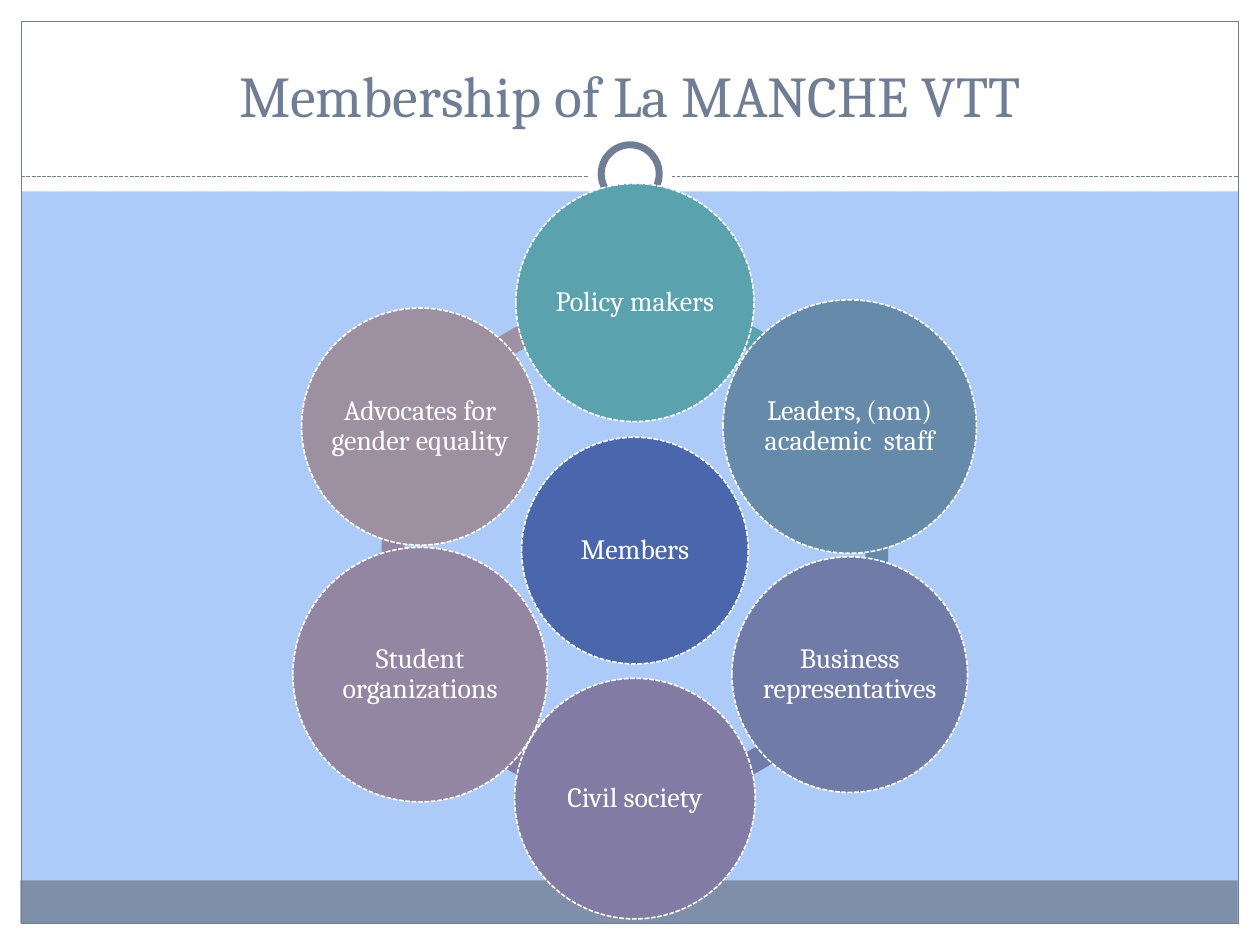
from math import cos, pi, sin

from lxml.etree import SubElement
from pptx import Presentation
from pptx.dml.color import RGBColor
from pptx.enum.dml import MSO_LINE
from pptx.enum.shapes import MSO_CONNECTOR, MSO_SHAPE
from pptx.enum.text import MSO_ANCHOR, PP_ALIGN
from pptx.oxml.ns import qn
from pptx.util import Cm, Pt

WHITE = RGBColor(0xFF, 0xFF, 0xFF)
SKY = RGBColor(0xAC, 0xCB, 0xF9)
SLATE = RGBColor(0x70, 0x7E, 0x95)
FOOTER = RGBColor(0x7F, 0x8F, 0xA9)
BLUE = RGBColor(0x4A, 0x66, 0xAC)
TEAL = RGBColor(0x5A, 0xA2, 0xAE)
STEEL = RGBColor(0x66, 0x8A, 0xAA)
INDIGO = RGBColor(0x71, 0x7B, 0xA7)
VIOLET = RGBColor(0x82, 0x7C, 0xA4)
MAUVE = RGBColor(0x93, 0x86, 0xA2)
ROSE = RGBColor(0x9D, 0x90, 0xA0)

deck = Presentation()
deck.slide_width, deck.slide_height = Cm(25.4), Cm(19.05)
page = deck.slides.add_slide(deck.slide_layouts[6])
page.background.fill.solid()
page.background.fill.fore_color.rgb = SKY


def add_shape(kind, left, top, width, height, fill=None, line=None, weight=0.75, dash=None):
    shape = page.shapes.add_shape(kind, Cm(left), Cm(top), Cm(width), Cm(height))
    shape.shadow.inherit = False
    if fill is None:
        shape.fill.background()
    else:
        shape.fill.solid()
        shape.fill.fore_color.rgb = fill
    if line is None:
        shape.line.fill.background()
    else:
        shape.line.color.rgb = line
        shape.line.width = Pt(weight)
        shape.line.dash_style = dash
    return shape


def add_text(text, left, top, width, height, size=16, color=WHITE,
             anchor=MSO_ANCHOR.MIDDLE, spacing=0.9, margin_x=0.3, margin_y=0.05):
    box = page.shapes.add_textbox(Cm(left), Cm(top), Cm(width), Cm(height))
    frame = box.text_frame
    frame.word_wrap = True
    frame.vertical_anchor = anchor
    frame.margin_left = frame.margin_right = Cm(margin_x)
    frame.margin_top = frame.margin_bottom = Cm(margin_y)
    para = frame.paragraphs[0]
    para.alignment = PP_ALIGN.CENTER
    para.line_spacing = spacing
    span = para.add_run()
    span.text = text
    span.font.name = "Cambria"
    span.font.size = Pt(size)
    span.font.color.rgb = color


# White header and margins, footer band, outline
for bounds, fill in [
    ((0, 18.62, 25.4, 0.43), WHITE),
    ((0, 0, 25.4, 3.86), WHITE),
    ((0, 0, 0.43, 19.05), WHITE),
    ((24.97, 0, 0.43, 19.05), WHITE),
    ((0.41, 17.75, 24.54, 0.86), FOOTER),
]:
    add_shape(MSO_SHAPE.RECTANGLE, *bounds, fill=fill)
add_shape(MSO_SHAPE.RECTANGLE, 0.43, 0.43, 24.54, 18.19, line=SLATE)

# Dashed rule with a ring in the middle
rule = page.shapes.add_connector(MSO_CONNECTOR.STRAIGHT, Cm(0.43), Cm(3.56), Cm(24.97), Cm(3.56))
rule.line.color.rgb = SLATE
rule.line.width = Pt(0.75)
rule.line.dash_style = MSO_LINE.SQUARE_DOT
SubElement(rule.line._get_or_add_ln().getparent(), qn("a:effectLst"))
add_shape(MSO_SHAPE.OVAL, 11.85, 2.67, 1.7, 1.7, fill=WHITE)
add_shape(MSO_SHAPE.OVAL, 12.12, 2.92, 1.17, 1.17, fill=WHITE, line=SLATE, weight=4)

# Title
add_text("Membership of La MANCHE VTT", 0.85, 0.64, 23.7, 2.1, size=33, color=SLATE,
         anchor=MSO_ANCHOR.BOTTOM, spacing=1, margin_x=0.25, margin_y=0.13)

# Member groups, clockwise from the top, with circle diameters
groups = [
    ("Policy makers", 4.8, TEAL),
    ("Leaders, (non) academic  staff", 5.11, STEEL),
    ("Business representatives", 4.75, INDIGO),
    ("Civil society", 4.85, VIOLET),
    ("Student organizations", 5.13, MAUVE),
    ("Advocates for gender equality", 4.78, ROSE),
]
center_x, center_y, orbit, ring = 12.8, 11.1, 5, 10.21

# Arcs linking neighbours; adjustments are in units of 100000/60000 degrees
full_turn = 216
step = full_turn // len(groups)
for index, (_, _, color) in reversed(list(enumerate(groups))):
    arc = add_shape(MSO_SHAPE.BLOCK_ARC, center_x - ring / 2, center_y - ring / 2,
                    ring, ring, fill=color)
    start = (162 + index * step) % full_turn
    arc.adjustments[0] = start
    arc.adjustments[1] = (start + step) % full_turn
    arc.adjustments[2] = 0.045

# Central circle, then the groups on their orbit
circles = [("Members", 4.57, BLUE, center_x, center_y)]
for index, group in enumerate(groups):
    angle = 2 * pi * index / len(groups)
    circles.append((*group, center_x + orbit * sin(angle), center_y - orbit * cos(angle)))
for label, size, color, x, y in circles:
    bounds = (x - size / 2, y - size / 2, size, size)
    add_shape(MSO_SHAPE.OVAL, *bounds, fill=color, line=WHITE, weight=0.9,
              dash=MSO_LINE.SQUARE_DOT)
    add_text(label, *bounds)

deck.save("out.pptx")
